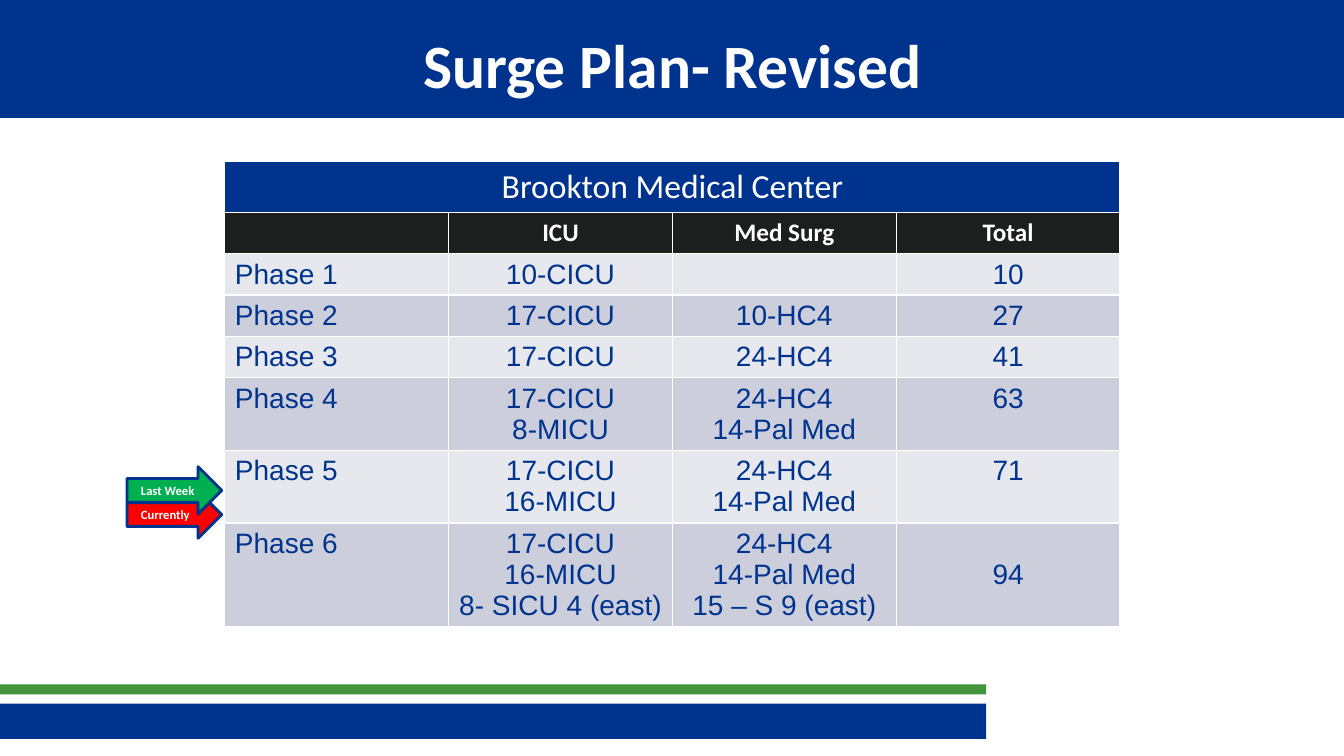
from pptx import Presentation
from pptx.dml.color import RGBColor
from pptx.enum.shapes import MSO_SHAPE as Shape
from pptx.enum.text import MSO_ANCHOR as Anchor, PP_ALIGN as Align
from pptx.util import Inches, Pt

TITLE = "Surge Plan- Revised"
HOSPITAL = "Brookton Medical Center"
HEADINGS = ["", "ICU", "Med Surg", "Total"]
PHASES = [
    ("Phase 1", "10-CICU", "", "10"),
    ("Phase 2", "17-CICU", "10-HC4", "27"),
    ("Phase 3", "17-CICU", "24-HC4", "41"),
    ("Phase 4", "17-CICU\n8-MICU", "24-HC4\n14-Pal Med", "63"),
    ("Phase 5", "17-CICU\n16-MICU", "24-HC4\n14-Pal Med", "71"),
    ("Phase 6", "17-CICU\n16-MICU\n8- SICU 4 (east)",
     "24-HC4\n14-Pal Med\n15 – S 9 (east)", "94"),
]
MARKERS = [("Currently", "FF0000", 4.87), ("Last Week", "00B050", 4.63)]
NAVY, GREEN, BLACK, WHITE = "00338E", "439539", "1D1E1E", "FFFFFF"
BANDS = ["E7E8EE", "CCCEDB"]
BARS = [
    (-0.03, 6.98, 9.81, 0.35, NAVY),
    (-0.03, 6.79, 9.81, 0.1, GREEN),
    (0, 0, 13.33, 1.17, NAVY),
]
TABLE_LEFT, TABLE_TOP, COLUMN = 2.23, 1.6, 2.22
HOSPITAL_ROW, BASE_ROW, EXTRA_LINE = 0.5, 0.41, 0.31


def color(value):
    return RGBColor.from_string(value)


def add_filled(shapes, kind, left, top, width, height, fill, line=None):
    shape = shapes.add_shape(kind, *map(Inches, (left, top, width, height)))
    shape.shadow.inherit = False
    shape.fill.solid()
    shape.fill.fore_color.rgb = color(fill)
    if line:
        shape.line.color.rgb = color(line)
        shape.line.width = Pt(2)
    else:
        shape.line.fill.background()


def write(frame, text, size, font, ink, bold=False, align=Align.CENTER):
    frame.text = text
    for para in frame.paragraphs:
        para.alignment = align
        para.font.size = Pt(size)
        para.font.name = font
        para.font.bold = bold
        para.font.color.rgb = color(ink)


def fill_cell(cell, text, fill, *style, **options):
    cell.fill.solid()
    cell.fill.fore_color.rgb = color(fill)
    write(cell.text_frame, text, *style, **options)


def add_title(page):
    title = page.shapes.title
    page.shapes.element.append(title.element)
    title.left, title.top, title.width, title.height = map(Inches, (0.67, 0.17, 12, 0.92))
    write(title.text_frame, TITLE, 44, "Calibri", WHITE, bold=True)
    title.text_frame.vertical_anchor = Anchor.MIDDLE


def add_plan(page):
    lines = [max(text.count("\n") for text in phase) for phase in PHASES]
    heights = [HOSPITAL_ROW, BASE_ROW] + [BASE_ROW + EXTRA_LINE * extra for extra in lines]
    frame = page.shapes.add_table(
        len(heights), len(HEADINGS), Inches(TABLE_LEFT), Inches(TABLE_TOP),
        Inches(COLUMN * len(HEADINGS)), Inches(sum(heights)))
    table = frame.table
    for column in table.columns:
        column.width = Inches(COLUMN)
    for row, height in zip(table.rows, heights):
        row.height = Inches(height)

    table.cell(0, 0).merge(table.cell(0, len(HEADINGS) - 1))
    fill_cell(table.cell(0, 0), HOSPITAL, NAVY, 24, "Calibri", WHITE)
    for column, heading in enumerate(HEADINGS):
        fill_cell(table.cell(1, column), heading, BLACK, 18, "Calibri", WHITE, bold=True)
    for row, phase in enumerate(PHASES):
        for column, text in enumerate(phase):
            fill_cell(table.cell(row + 2, column), text, BANDS[row % 2], 20, "Arial", NAVY,
                      align=Align.CENTER if column else Align.LEFT)
    table.cell(len(heights) - 1, len(HEADINGS) - 1).vertical_anchor = Anchor.MIDDLE


def add_marker(page, label, fill, top):
    group = page.shapes.add_group_shape()
    add_filled(group.shapes, Shape.RIGHT_ARROW, 1.26, top, 0.94, 0.47, fill, NAVY)
    box = group.shapes.add_textbox(*map(Inches, (1.3, top + 0.11, 0.74, 0.25)))
    box.text_frame.word_wrap = False
    write(box.text_frame, label, 9, "Calibri", WHITE, bold=True, align=Align.LEFT)


def main():
    deck = Presentation()
    deck.slide_width, deck.slide_height = Inches(13.33), Inches(7.5)
    page = deck.slides.add_slide(deck.slide_layouts[5])
    for bar in BARS:
        add_filled(page.shapes, Shape.RECTANGLE, *bar)
    add_title(page)
    add_plan(page)
    for label, fill, top in MARKERS:
        add_marker(page, label, fill, top)
    deck.save("out.pptx")


if __name__ == "__main__":
    main()
